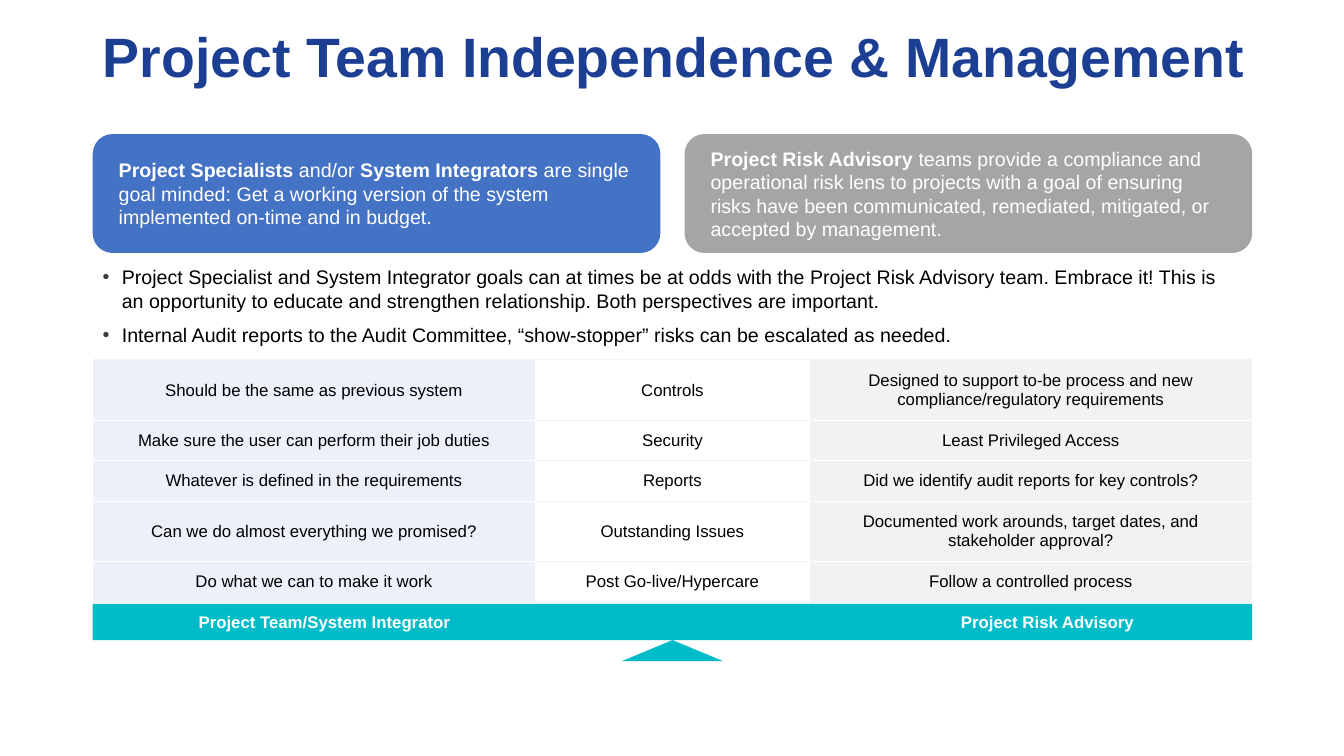
import pptx
import pptx.util
import pptx.dml.color
import pptx.enum.shapes
import pptx.enum.text
import pptx.oxml
import pptx.oxml.ns
from lxml import etree

Inches = pptx.util.Inches
Pt = pptx.util.Pt
Shape = pptx.enum.shapes.MSO_SHAPE
Align = pptx.enum.text.PP_ALIGN
Anchor = pptx.enum.text.MSO_ANCHOR

COLORS = {
    "title": "1C3F94", "specialist": "4472C4", "advisory": "A5A5A5",
    "team_cell": "DAE3F3", "risk_cell": "EDEDED", "rule": "F2F2F2",
    "teal": "00BCC8", "bullet": "3C3D3E", "text": "000000", "white": "FFFFFF",
}
LEFT, WIDTH = 0.92, 11.5
GOALS = [
    ("specialist", [
        ("Project Specialists ", True), ("and/or ", False),
        ("System Integrators ", True),
        ("are single goal minded: Get a working version of the system "
         "implemented on-time and in budget.", False)]),
    ("advisory", [
        ("Project Risk Advisory ", True),
        ("teams provide a compliance and operational risk lens to projects "
         "with a goal of ensuring risks have been communicated, remediated, "
         "mitigated, or accepted by management.", False)]),
]
POINTS = [
    "Project Specialist and System Integrator goals can at times be at odds "
    "with the Project Risk Advisory team. Embrace it! This is an opportunity "
    "to educate and strengthen relationship. Both perspectives are important.",
    "Internal Audit reports to the Audit Committee, “show-stopper” risks can "
    "be escalated as needed.",
]
COLUMNS = [(4.39, "team_cell", 49), (2.72, "white", 100), (4.39, "risk_cell", 69)]
ROWS = [
    (0.6, ["Should be the same as previous system", "Controls",
           "Designed to support to-be process and new compliance/regulatory requirements"]),
    (0.4, ["Make sure the user can perform their job duties", "Security",
           "Least Privileged Access"]),
    (0.4, ["Whatever is defined in the requirements", "Reports",
           "Did we identify audit reports for key controls?"]),
    (0.6, ["Can we do almost everything we promised?", "Outstanding Issues",
           "Documented work arounds, target dates, and stakeholder approval?"]),
    (0.4, ["Do what we can to make it work", "Post Go-live/Hypercare",
           "Follow a controlled process"]),
]


def rgb(name):
    return pptx.dml.color.RGBColor.from_string(COLORS[name])


def style(para, size, color, bold=None, align=Align.LEFT):
    para.alignment = align
    para.font.name = "Arial"
    para.font.size = Pt(size)
    para.font.bold = bold
    para.font.color.rgb = rgb(color)


def set_margins(target, horizontal, vertical):
    target.margin_left = target.margin_right = Inches(horizontal)
    target.margin_top = target.margin_bottom = Inches(vertical)


def add_filled(page, kind, color, left, top, width, height):
    shape = page.shapes.add_shape(
        kind, Inches(left), Inches(top), Inches(width), Inches(height))
    shape.shadow.inherit = False
    shape.fill.solid()
    shape.fill.fore_color.rgb = rgb(color)
    shape.line.fill.background()
    return shape


def add_text_box(page, left, top, width, height):
    box = page.shapes.add_textbox(
        Inches(left), Inches(top), Inches(width), Inches(height))
    box.text_frame.word_wrap = True
    return box.text_frame


def add_title(page, left, top, width, height):
    title = page.shapes.title
    title.left, title.top = Inches(left), Inches(top)
    title.width, title.height = Inches(width), Inches(height)
    frame = title.text_frame
    frame.text = "Project Team Independence & Management"
    frame.auto_size = pptx.enum.text.MSO_AUTO_SIZE.NONE
    frame.vertical_anchor = Anchor.MIDDLE
    para = frame.paragraphs[0]
    para.line_spacing = 0.9
    style(para, 39.6, "title", True)


def add_goals(page, left, top, width, height):
    gap = 0.24
    box_width = (width - gap) / 2
    for index, (color, spans) in enumerate(GOALS):
        box = add_filled(page, Shape.ROUNDED_RECTANGLE, color,
                         left + index * (box_width + gap), top, box_width, height)
        frame = box.text_frame
        frame.vertical_anchor = Anchor.MIDDLE
        set_margins(frame, 0.2, 0.1)
        para = frame.paragraphs[0]
        style(para, 14, "white")
        for text, bold in spans:
            span = para.add_run()
            span.text = text
            span.font.bold = bold


def add_points(page, left, top, width, height):
    frame = add_text_box(page, left, top, width, height)
    for index, text in enumerate(POINTS):
        para = frame.add_paragraph() if index else frame.paragraphs[0]
        para.text = text
        props = para._p.get_or_add_pPr()
        props.set("marL", str(Inches(0.19)))
        props.set("indent", str(-Inches(0.19)))
        bullet_color = etree.SubElement(props, pptx.oxml.ns.qn("a:buClr"))
        etree.SubElement(bullet_color, pptx.oxml.ns.qn("a:srgbClr"), val=COLORS["bullet"])
        etree.SubElement(props, pptx.oxml.ns.qn("a:buFont"), typeface="Arial")
        etree.SubElement(props, pptx.oxml.ns.qn("a:buChar"), char="•")
        para.space_before = Pt(2 if index else 0)
        para.space_after = Pt(6)
        style(para, 14, "text")


def format_cell(cell, color, opacity, edges):
    cell.fill.solid()
    cell.fill.fore_color.rgb = rgb(color)
    props = cell._tc.get_or_add_tcPr()
    if opacity < 100:
        fill_color = props.find(".//" + pptx.oxml.ns.qn("a:srgbClr"))
        etree.SubElement(fill_color, pptx.oxml.ns.qn("a:alpha"), val=str(opacity * 1000))
    for position, (side, edge_color) in enumerate(edges.items()):
        props.insert(position, pptx.oxml.parse_xml(
            f'<a:ln{side} {pptx.oxml.ns.nsdecls("a")} w="{Pt(0.75)}"><a:solidFill>'
            f'<a:srgbClr val="{COLORS[edge_color]}"/></a:solidFill></a:ln{side}>'))


def add_comparison(page, left, top, width):
    height = sum(row_height for row_height, _ in ROWS)
    table = page.shapes.add_table(len(ROWS), len(COLUMNS), Inches(left), Inches(top),
                                  Inches(width), Inches(height)).table
    table.first_row = table.horz_banding = False
    for column, (column_width, _, _) in zip(table.columns, COLUMNS):
        column.width = Inches(column_width)
    for r, (row_height, texts) in enumerate(ROWS):
        table.rows[r].height = Inches(row_height)
        for c, (_, color, opacity) in enumerate(COLUMNS):
            cell = table.cell(r, c)
            cell.text = texts[c]
            cell.vertical_anchor = Anchor.MIDDLE
            set_margins(cell, 0.1, 0.1)
            style(cell.text_frame.paragraphs[0], 12, "text", align=Align.CENTER)
            above = "rule" if c == 1 or r == 0 else "white"
            below = "rule" if c == 1 or r == len(ROWS) - 1 else "white"
            format_cell(cell, color, opacity,
                        {"L": "white", "R": "white", "T": above, "B": below})


def add_balance(page, left, top, width, height):
    pivot_width = 1.01
    add_filled(page, Shape.ISOSCELES_TRIANGLE, "teal",
               left + (width - pivot_width) / 2, top + height, pivot_width, 0.21)
    beam = add_filled(page, Shape.RECTANGLE, "teal", left, top, width, height).text_frame
    set_margins(beam, 0.13, 0.07)
    beam.margin_left = Inches(1.05)
    beam.text = "Project Team/System Integrator"
    label = add_text_box(page, left + 8.44, top + 0.03, 2.06, 0.3)
    label.text = "Project Risk Advisory"
    for frame, align in ((beam, Align.LEFT), (label, Align.CENTER)):
        frame.vertical_anchor = Anchor.MIDDLE
        style(frame.paragraphs[0], 12, "white", True, align)


def main():
    deck = pptx.Presentation()
    deck.slide_width, deck.slide_height = Inches(13.33), Inches(7.5)
    page = deck.slides.add_slide(deck.slide_layouts[5])
    add_title(page, LEFT, 0, 11.9, 1.18)
    add_goals(page, LEFT, 1.33, WIDTH, 1.18)
    add_points(page, LEFT, 2.58, WIDTH, 0.92)
    add_comparison(page, LEFT, 3.57, WIDTH)
    add_balance(page, LEFT, 5.99, WIDTH, 0.36)
    deck.save("out.pptx")


if __name__ == "__main__":
    main()
